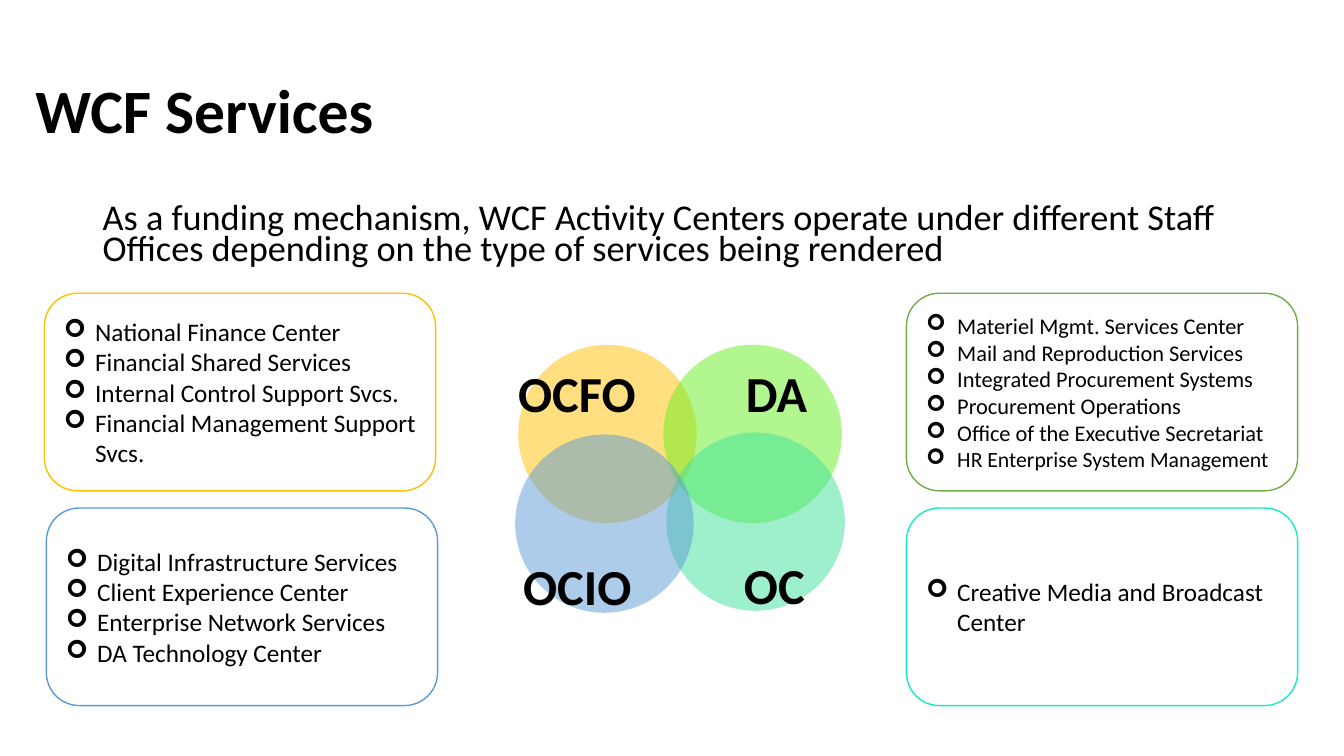
import dataclasses

import lxml.etree
import pptx
import pptx.dml.color
import pptx.enum.shapes
import pptx.enum.text
import pptx.oxml.ns
import pptx.util

Inches = pptx.util.Inches
Pt = pptx.util.Pt
Shape = pptx.enum.shapes.MSO_SHAPE
Anchor = pptx.enum.text.MSO_ANCHOR
Align = pptx.enum.text.PP_ALIGN
qn = pptx.oxml.ns.qn

FONT = "Calibri"
BLACK = "000000"
CARD_WIDTH, CARD_HEIGHT = 3.88, 1.96
CIRCLE_SIZE = 1.77
BULLET_INDENT = 0.31


@dataclasses.dataclass
class Card:
    left: float
    top: float
    outline: str
    services: list[str]
    size: float = 18
    last_size: float = 18


@dataclasses.dataclass
class Circle:
    left: float
    top: float
    fill: str


@dataclasses.dataclass
class Label:
    text: str
    left: float
    top: float
    width: float


CARDS = [
    Card(0.44, 2.91, "FFC000", [
        "National Finance Center",
        "Financial Shared Services",
        "Internal Control Support Svcs.",
        "Financial Management Support Svcs.",
    ]),
    Card(0.46, 5.04, "5B9BD5", [
        "Digital Infrastructure Services",
        "Client Experience Center",
        "Enterprise Network Services",
        "DA Technology Center",
    ]),
    Card(8.99, 2.91, "70AD47", [
        "Materiel Mgmt. Services Center",
        "Mail and Reproduction Services",
        "Integrated Procurement Systems",
        "Procurement Operations",
        "Office of the Executive Secretariat",
        "HR Enterprise System Management",
    ], 16, 15.5),
    Card(8.99, 5.04, "14ECC3", ["Creative Media and Broadcast Center"]),
]
CIRCLES = [
    Circle(5.14, 3.42, "FFC000"),
    Circle(6.58, 3.42, "67EF21"),
    Circle(6.61, 4.29, "3FE19B"),
    Circle(5.11, 4.31, "5B9BD5"),
]
LABELS = [
    Label("OCFO", 5.04, 3.54, 1.38),
    Label("DA", 7.3, 3.54, 0.82),
    Label("OCIO", 5.09, 5.46, 1.29),
    Label("OC", 7.28, 5.45, 0.81),
]


def color(value: str) -> pptx.dml.color.RGBColor:
    return pptx.dml.color.RGBColor.from_string(value)


def set_font(para, size: float, bold: bool = False) -> None:
    para.font.name = FONT
    para.font.size = Pt(size)
    para.font.bold = bold
    para.font.color.rgb = color(BLACK)


def add_bullet(para) -> None:
    properties = para._p.get_or_add_pPr()
    properties.set("marL", str(Inches(BULLET_INDENT)))
    properties.set("indent", str(-Inches(BULLET_INDENT)))
    lxml.etree.SubElement(properties, qn("a:buFont"), typeface="Wingdings")
    lxml.etree.SubElement(properties, qn("a:buChar"), char="➢")


def add_title(page) -> None:
    title = page.shapes.title
    title.left, title.top = Inches(0.25), Inches(0.4)
    title.width, title.height = Inches(9.35), Inches(1.45)
    frame = title.text_frame
    frame.text = "WCF Services"
    frame.vertical_anchor = Anchor.MIDDLE
    frame.auto_size = pptx.enum.text.MSO_AUTO_SIZE.NONE
    para = frame.paragraphs[0]
    para.alignment = Align.LEFT
    para.line_spacing = 0.9
    set_font(para, 44, True)


def add_introduction(page) -> None:
    box = page.shapes.add_textbox(Inches(0.92), Inches(2), Inches(11.5), Inches(0.78))
    box.text_frame.word_wrap = True
    para = box.text_frame.paragraphs[0]
    para.text = (
        "As a funding mechanism, WCF Activity Centers operate under different Staff "
        "Offices depending on the type of services being rendered"
    )
    para.line_spacing = 0.7
    set_font(para, 25.9)


def add_card(page, card: Card) -> None:
    box = page.shapes.add_shape(
        Shape.ROUNDED_RECTANGLE, Inches(card.left), Inches(card.top),
        Inches(CARD_WIDTH), Inches(CARD_HEIGHT))
    box.shadow.inherit = False
    box.fill.solid()
    box.fill.fore_color.rgb = color("FFFFFF")
    box.line.color.rgb = color(card.outline)
    box.line.width = Pt(1)
    frame = box.text_frame
    frame.word_wrap = True
    frame.vertical_anchor = Anchor.MIDDLE
    frame.text = "\n".join(card.services)
    for para in frame.paragraphs:
        para.alignment = Align.LEFT
        add_bullet(para)
        set_font(para, card.size)
    frame.paragraphs[-1].font.size = Pt(card.last_size)


def add_circle(group, circle: Circle) -> None:
    disc = group.shapes.add_shape(
        Shape.OVAL, Inches(circle.left), Inches(circle.top),
        Inches(CIRCLE_SIZE), Inches(CIRCLE_SIZE))
    disc.shadow.inherit = False
    disc.line.fill.background()
    disc.fill.solid()
    disc.fill.fore_color.rgb = color(circle.fill)
    shade = disc._element.spPr.find(".//" + qn("a:srgbClr"))
    lxml.etree.SubElement(shade, qn("a:alpha"), val="50000")


def add_label(page, label: Label) -> None:
    box = page.shapes.add_textbox(
        Inches(label.left), Inches(label.top), Inches(label.width), Inches(0.71))
    box.text_frame.word_wrap = False
    box.text_frame.auto_size = pptx.enum.text.MSO_AUTO_SIZE.SHAPE_TO_FIT_TEXT
    para = box.text_frame.paragraphs[0]
    para.text = label.text
    set_font(para, 36, True)


def main() -> None:
    deck = pptx.Presentation()
    deck.slide_width, deck.slide_height = Inches(13.33), Inches(7.5)
    page = deck.slides.add_slide(deck.slide_layouts.get_by_name("Title Only"))
    add_title(page)
    add_introduction(page)
    for card in CARDS:
        add_card(page, card)
    group = page.shapes.add_group_shape()
    for circle in CIRCLES:
        add_circle(group, circle)
    for label in LABELS:
        add_label(page, label)
    deck.save("out.pptx")


if __name__ == "__main__":
    main()
